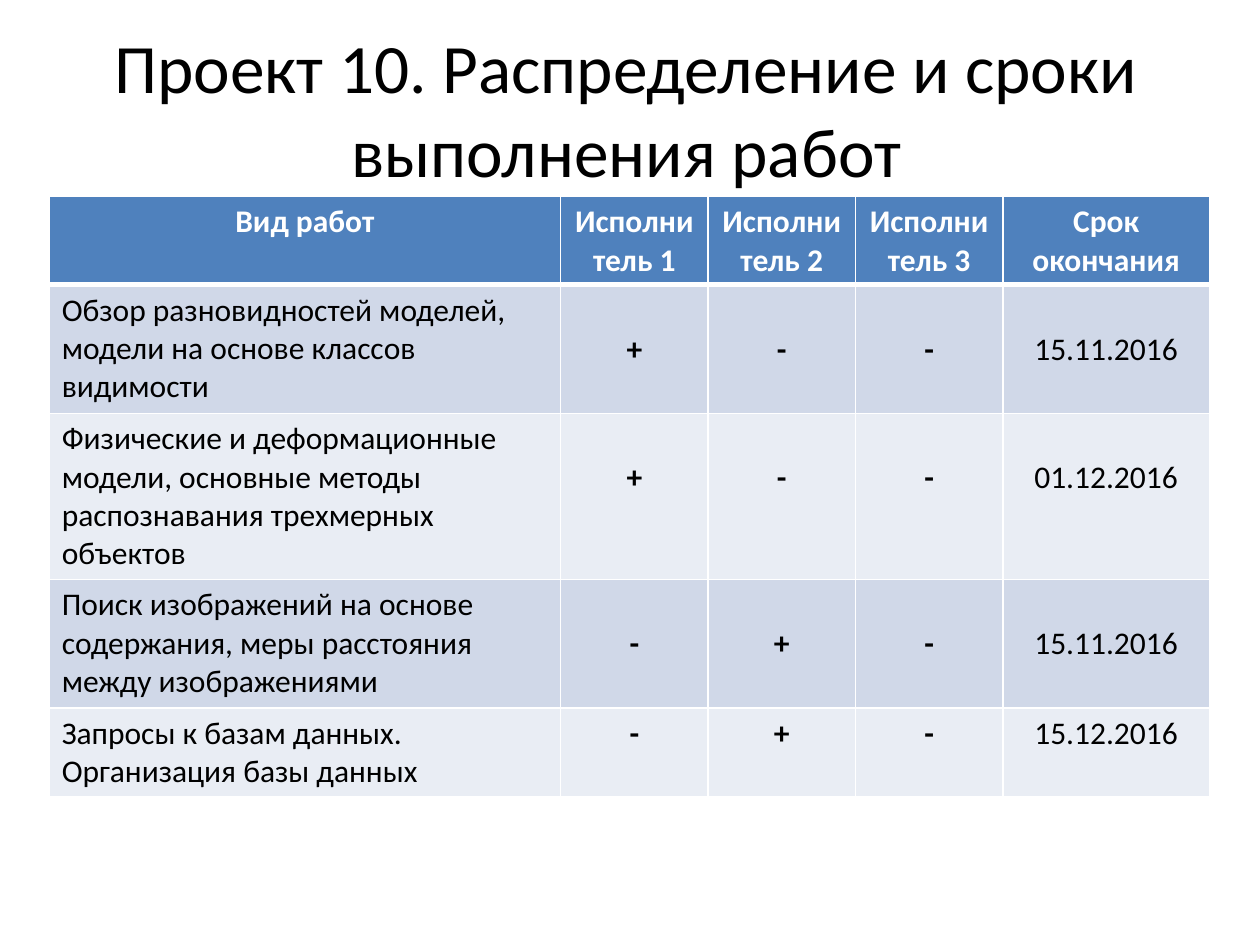
import pptx
import pptx.dml.color
import pptx.enum.text
import pptx.oxml
import pptx.oxml.ns
import pptx.util

TITLE = "Проект 10. Распределение и сроки выполнения работ"
HEADINGS = ("Вид работ", "Исполнитель 1", "Исполнитель 2", "Исполнитель 3", "Срок окончания")
WORKS = [
    ("Обзор разновидностей моделей, модели на основе классов видимости",
     "+", "-", "-", "15.11.2016"),
    ("Физические и деформационные модели, основные методы распознавания трехмерных объектов",
     "+", "-", "-", "01.12.2016"),
    ("Поиск изображений на основе содержания, меры расстояния между изображениями",
     "-", "+", "-", "15.11.2016"),
    ("Запросы к базам данных. Организация базы данных",
     "-", "+", "-", "15.12.2016"),
]
COLUMN_WIDTHS = (4.06, 1.17, 1.17, 1.17, 1.64)
ROW_HEIGHTS = (0.7, 1.02, 1.32, 1.02, 0.7)
HEADER_FILL, BAND_FILLS = "4F81BD", ("D0D8E8", "E9EDF4")
BLACK, WHITE = "000000", "FFFFFF"
LINE_DROP = 0.36
ALIGN = pptx.enum.text.PP_ALIGN
inch = pptx.util.Inches


def rgb(value):
    return pptx.dml.color.RGBColor.from_string(value)


def write(frame, text, color, align, **font_format):
    paragraph = frame.paragraphs[0]
    paragraph.alignment = align
    run = paragraph.add_run()
    run.text = text
    run.font.color.rgb = rgb(color)
    for attribute, value in {"name": "Calibri", **font_format}.items():
        setattr(run.font, attribute, value)


def add_borders(cell, widths):
    properties = cell._tc.get_or_add_tcPr()
    for side, points in widths.items():
        properties.append(pptx.oxml.parse_xml(
            f'<a:ln{side} {pptx.oxml.ns.nsdecls("a")} w="{pptx.util.Pt(points)}">'
            f'<a:solidFill><a:srgbClr val="{WHITE}"/></a:solidFill></a:ln{side}>'))


def add_title(slide):
    frame = slide.shapes.add_textbox(inch(0.47), inch(0.23), inch(9), inch(1.25)).text_frame
    frame.word_wrap = True
    frame.vertical_anchor = pptx.enum.text.MSO_ANCHOR.MIDDLE
    write(frame, TITLE, BLACK, ALIGN.CENTER, size=pptx.util.Pt(39.6))


def add_schedule(slide):
    content = [HEADINGS, *WORKS]
    table = slide.shapes.add_table(
        len(content), len(HEADINGS), inch(0.39), inch(1.56),
        inch(sum(COLUMN_WIDTHS)), inch(sum(ROW_HEIGHTS))).table
    for column, width in zip(table.columns, COLUMN_WIDTHS):
        column.width = inch(width)
    for row, height in zip(table.rows, ROW_HEIGHTS):
        row.height = inch(height)
    last_row, last_column = len(content) - 1, len(HEADINGS) - 1
    for r, texts in enumerate(content):
        header = r == 0
        for c, text in enumerate(texts):
            cell = table.cell(r, c)
            add_borders(cell, {"L": 1, "R": 1, "T": 3 if r == 1 else 1, "B": 3 if header else 1})
            cell.fill.solid()
            cell.fill.fore_color.rgb = rgb(HEADER_FILL if header else BAND_FILLS[(r - 1) % 2])
            if 0 < r < last_row and c > 0:
                cell.margin_top = inch(LINE_DROP)
            write(cell.text_frame, text, WHITE if header else BLACK,
                  ALIGN.CENTER if header or c > 0 else ALIGN.LEFT,
                  size=pptx.util.Pt(18), bold=header or 0 < c < last_column)


def main():
    deck = pptx.Presentation()
    deck.slide_width, deck.slide_height = inch(10), inch(7.5)
    slide = deck.slides.add_slide(deck.slide_layouts[6])
    add_title(slide)
    add_schedule(slide)
    deck.save("out.pptx")


if __name__ == "__main__":
    main()
